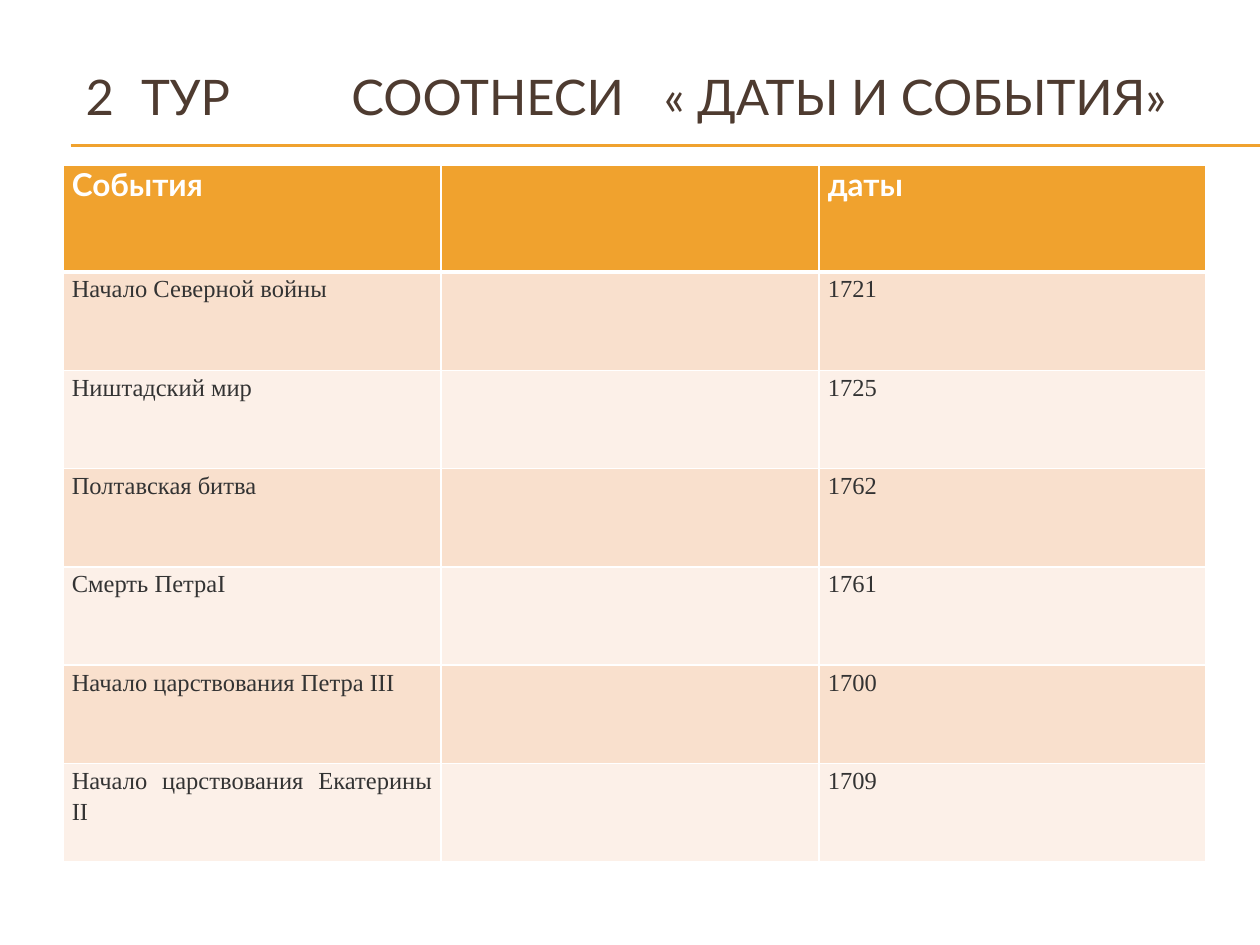
from pptx import Presentation
from pptx.util import Inches, Pt
from pptx.dml.color import RGBColor as RGB
from pptx.enum.shapes import MSO_CONNECTOR as LINE
from pptx.enum.text import MSO_ANCHOR as ANCHOR, PP_ALIGN as ALIGN
from pptx.oxml.ns import qn
from lxml.etree import SubElement as Sub

COLORS = {"gold": "F0A22E", "brown": "4E3B30", "white": "FFFFFF",
          "gray": "333333", "peach": "F9E0CD", "cream": "FCF0E8"}


def add_text(para, text, font, size, color, bold=False):
    run = para.add_run()
    run.text = text
    run.font.name = font
    run.font.size = Pt(size)
    run.font.bold = bold
    run.font.color.rgb = RGB.from_string(COLORS[color])


def add_border(cell, side, width):
    props = cell._tc.get_or_add_tcPr()
    line = Sub(props, qn("a:" + side), w=str(Pt(width)))
    fill = Sub(line, qn("a:solidFill"))
    Sub(fill, qn("a:srgbClr"), val=COLORS["white"])


deck = Presentation()
deck.slide_width, deck.slide_height = Inches(10), Inches(7.5)
slide = deck.slides.add_slide(deck.slide_layouts[6])

# Double rule under the title
for y in (1.15, 1.16):
    rule = slide.shapes.add_connector(
        LINE.STRAIGHT, Inches(0.56), Inches(y), Inches(10), Inches(y))
    rule.line.color.rgb = RGB.from_string(COLORS["gold"])
    rule.line.width = Pt(0.75)
    Sub(rule._element.spPr, qn("a:effectLst"))

# Title, spaced with tab stops
title = slide.shapes.add_textbox(Inches(0.5), Inches(0.3), Inches(9), Inches(0.93))
frame = title.text_frame
frame.word_wrap = True
frame.vertical_anchor = ANCHOR.MIDDLE
frame.margin_left = Inches(0.18)
para = frame.paragraphs[0]
tabs = Sub(para._p.get_or_add_pPr(), qn("a:tabLst"))
for stop in (0.44, 2.11, 4.59):
    Sub(tabs, qn("a:tab"), pos=str(Inches(stop)), algn="l")
add_text(para, "2\tТУР\tСООТНЕСИ\t« ДАТЫ И СОБЫТИЯ»", "Lato", 28, "brown")

# Table of events and dates
rows = [
    ("События", "", "даты"),
    ("Начало Северной войны", "", "1721"),
    ("Ништадский мир", "", "1725"),
    ("Полтавская битва", "", "1762"),
    ("Смерть ПетраI", "", "1761"),
    ("Начало царствования Петра III", "", "1700"),
    ("Начало царствования Екатерины II", "", "1709"),
]
widths = (3, 3, 3.07)
table = slide.shapes.add_table(
    len(rows), len(widths), Inches(0.5), Inches(1.31), Inches(9.07), Inches(5.51)).table
for col, width in zip(table.columns, widths):
    col.width = Inches(width)

for r, row in enumerate(rows):
    head = r == 0
    table.rows[r].height = Inches(0.85 if head else 0.78)
    shade = "gold" if head else ("peach" if r % 2 else "cream")
    for c, text in enumerate(row):
        cell = table.cell(r, c)
        cell.margin_left = cell.margin_right = Inches(0.07)
        cell.margin_top = cell.margin_bottom = 0
        for side in ("lnL", "lnR", "lnT", "lnB"):
            thick = (head and side == "lnB") or (r == 1 and side == "lnT")
            add_border(cell, side, 3 if thick else 1)
        cell.fill.solid()
        cell.fill.fore_color.rgb = RGB.from_string(COLORS[shade])
        if not text:
            continue
        para = cell.text_frame.paragraphs[0]
        if head:
            add_text(para, text, "Lato", 18, "white", True)
        else:
            para.alignment = ALIGN.JUSTIFY
            para.line_spacing = 1.15
            para.space_after = Pt(6.2)
            add_text(para, text, "Times New Roman", 14, "gray")

deck.save("out.pptx")
